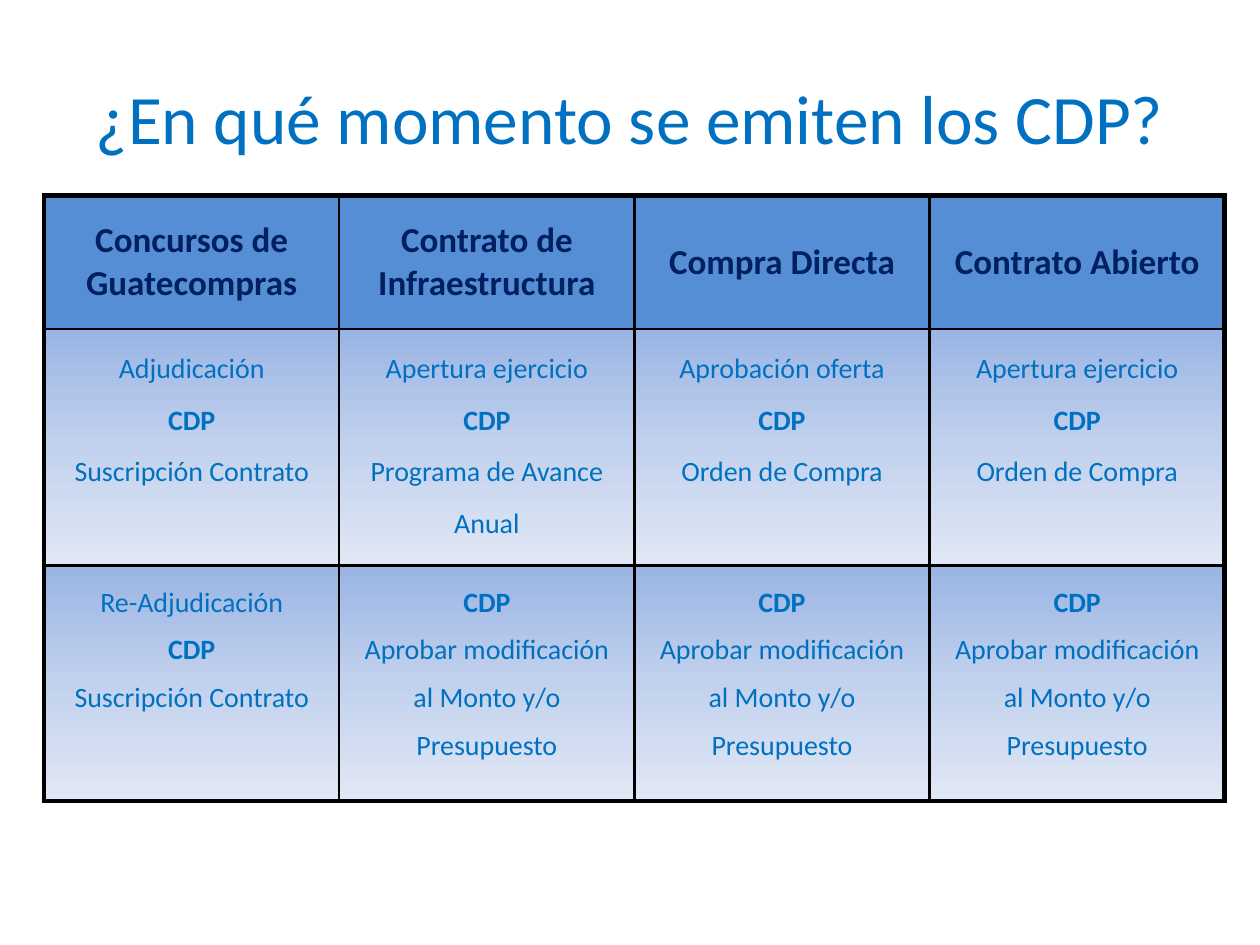
"""Build a slide with a table of when each kind of CDP is issued."""
from lxml.etree import SubElement
from pptx import Presentation
from pptx.dml.color import RGBColor
from pptx.enum.text import MSO_ANCHOR, PP_ALIGN
from pptx.oxml.ns import qn
from pptx.util import Cm, Pt

TITLE = "¿En qué momento se emiten los CDP?"
HEADERS = ["Concursos de Guatecompras", "Contrato de Infraestructura",
           "Compra Directa", "Contrato Abierto"]
CHANGE = ["CDP", "Aprobar modificación al Monto y/o Presupuesto"]
STEPS = [
    [["Adjudicación", "CDP", "Suscripción Contrato"],
     ["Apertura ejercicio", "CDP", "Programa de Avance Anual"],
     ["Aprobación oferta", "CDP", "Orden de Compra"],
     ["Apertura ejercicio", "CDP", "Orden de Compra"]],
    [["Re-Adjudicación", "CDP", "Suscripción Contrato"], CHANGE, CHANGE, CHANGE],
]
ROWS = [[[h] for h in HEADERS]] + STEPS
HEIGHTS = [2.69, 4.77, 4.75]
SPACING = [1.0, 1.5, 1.4]
COL_W = 5.95
FONT = "Calibri"
COLORS = {"text": "0070C0", "header_text": "002060", "header": "558ED5", "line": "000000"}
GRADIENT = [(0, "9AB5E4"), (50, "C2D1ED"), (100, "E1E8F5")]
THICK, THIN = 3, 1.5


def set_font(p, size, color, bold=False):
    """Format a paragraph's font."""
    p.font.name, p.font.size, p.font.bold = FONT, Pt(size), bold
    p.font.color.rgb = RGBColor.from_string(COLORS[color])


def add_color(parent, color):
    """Append an RGB colour element."""
    SubElement(parent, qn("a:srgbClr"), val=color)


def set_borders(cell, outer):
    """Draw the four borders, thick on the outer sides."""
    tc_pr = cell._tc.get_or_add_tcPr()
    for side in "LRTB":
        width = Pt(THICK if side in outer else THIN)
        ln = SubElement(tc_pr, qn(f"a:ln{side}"), w=str(width))
        add_color(SubElement(ln, qn("a:solidFill")), COLORS["line"])


def set_gradient(cell):
    """Fill a cell from top to bottom with the gradient."""
    fill = SubElement(cell._tc.get_or_add_tcPr(), qn("a:gradFill"))
    stops = SubElement(fill, qn("a:gsLst"))
    for pos, color in GRADIENT:
        add_color(SubElement(stops, qn("a:gs"), pos=str(pos * 1000)), color)
    SubElement(fill, qn("a:lin"), ang="5400000", scaled="0")


def fill_cell(cell, lines, i, j):
    """Write and format the cell in row i and column j."""
    header = i == 0
    edges = {"L": j == 0, "R": j == len(HEADERS) - 1, "T": header, "B": i == len(ROWS) - 1}
    set_borders(cell, [side for side, outer in edges.items() if outer])
    if header:
        cell.fill.solid()
        cell.fill.fore_color.rgb = RGBColor.from_string(COLORS["header"])
        cell.vertical_anchor = MSO_ANCHOR.MIDDLE
    else:
        set_gradient(cell)
    tf = cell.text_frame
    tf.text = "\n".join(lines)
    for p in tf.paragraphs:
        p.alignment = PP_ALIGN.CENTER
        p.line_spacing = SPACING[i]
        if header:
            set_font(p, 20, "header_text", True)
        else:
            set_font(p, 16, "text", p.text == "CDP")


def main():
    """Create and save the presentation."""
    prs = Presentation()
    prs.slide_width, prs.slide_height = Cm(25.4), Cm(19.05)
    s = prs.slides.add_slide(prs.slide_layouts[5])
    title = s.shapes.title
    title.left, title.top, title.width, title.height = Cm(1.27), Cm(0.76), Cm(22.86), Cm(3.18)
    tf = title.text_frame
    tf.text = TITLE
    tf.vertical_anchor = MSO_ANCHOR.MIDDLE
    p = tf.paragraphs[0]
    p.alignment = PP_ALIGN.CENTER
    set_font(p, 39.6, "text")

    n = len(HEADERS)
    table = s.shapes.add_table(len(ROWS), n, Cm(0.89), Cm(3.94),
                               Cm(COL_W * n), Cm(sum(HEIGHTS))).table
    table.first_row = table.horz_banding = False
    for col in table.columns:
        col.width = Cm(COL_W)
    for i, row in enumerate(ROWS):
        table.rows[i].height = Cm(HEIGHTS[i])
        for j, lines in enumerate(row):
            fill_cell(table.cell(i, j), lines, i, j)
    prs.save("out.pptx")


if __name__ == "__main__":
    main()
